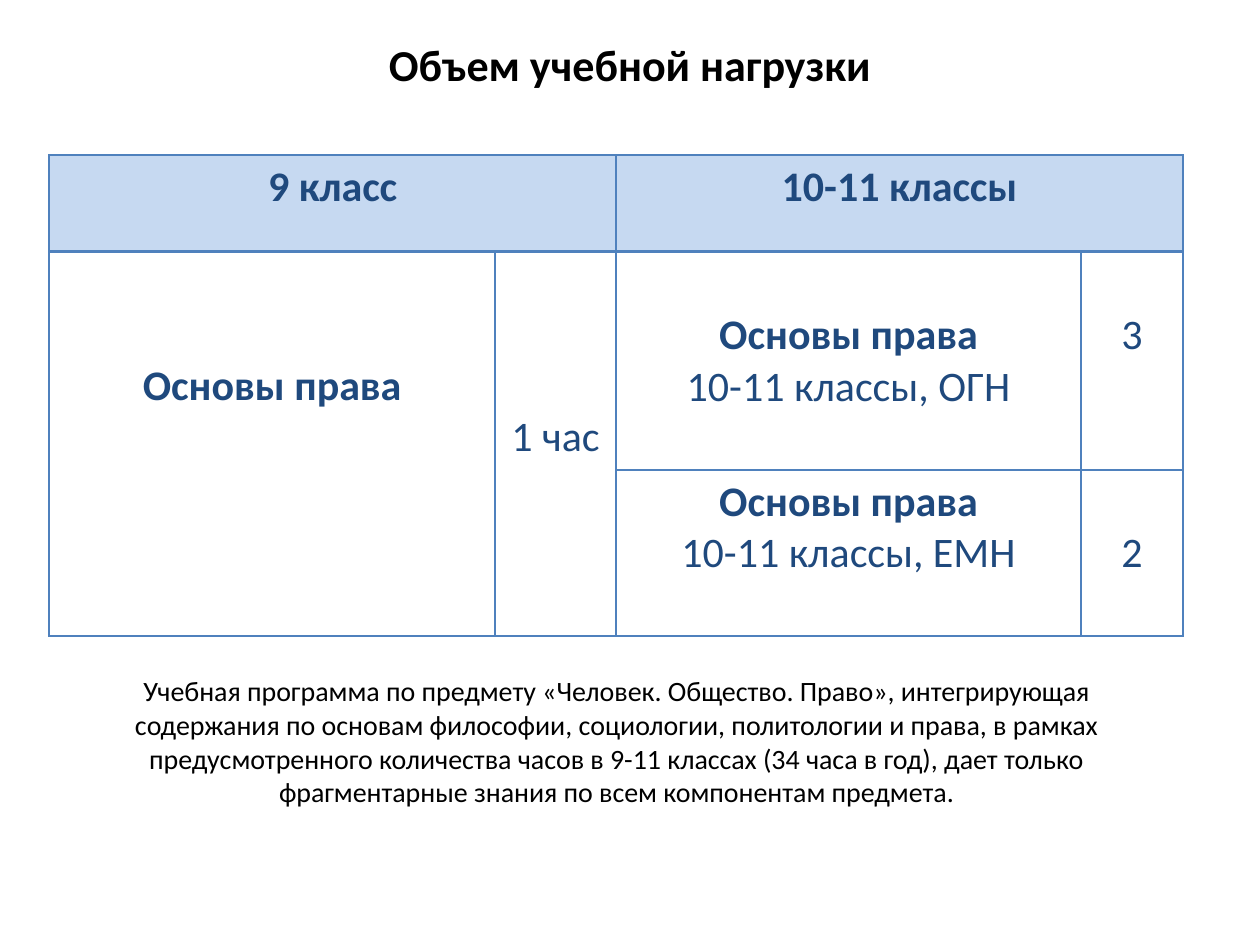
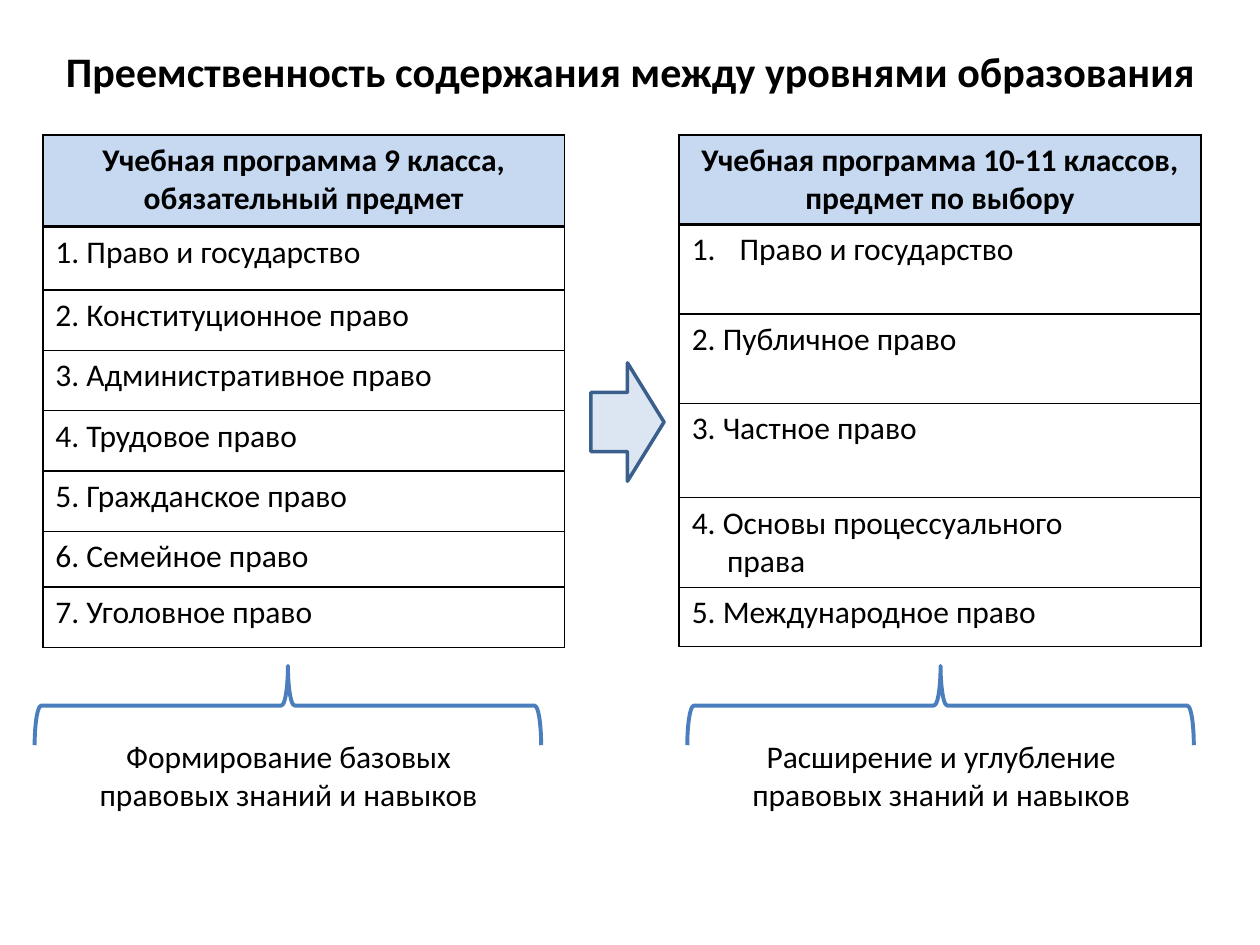
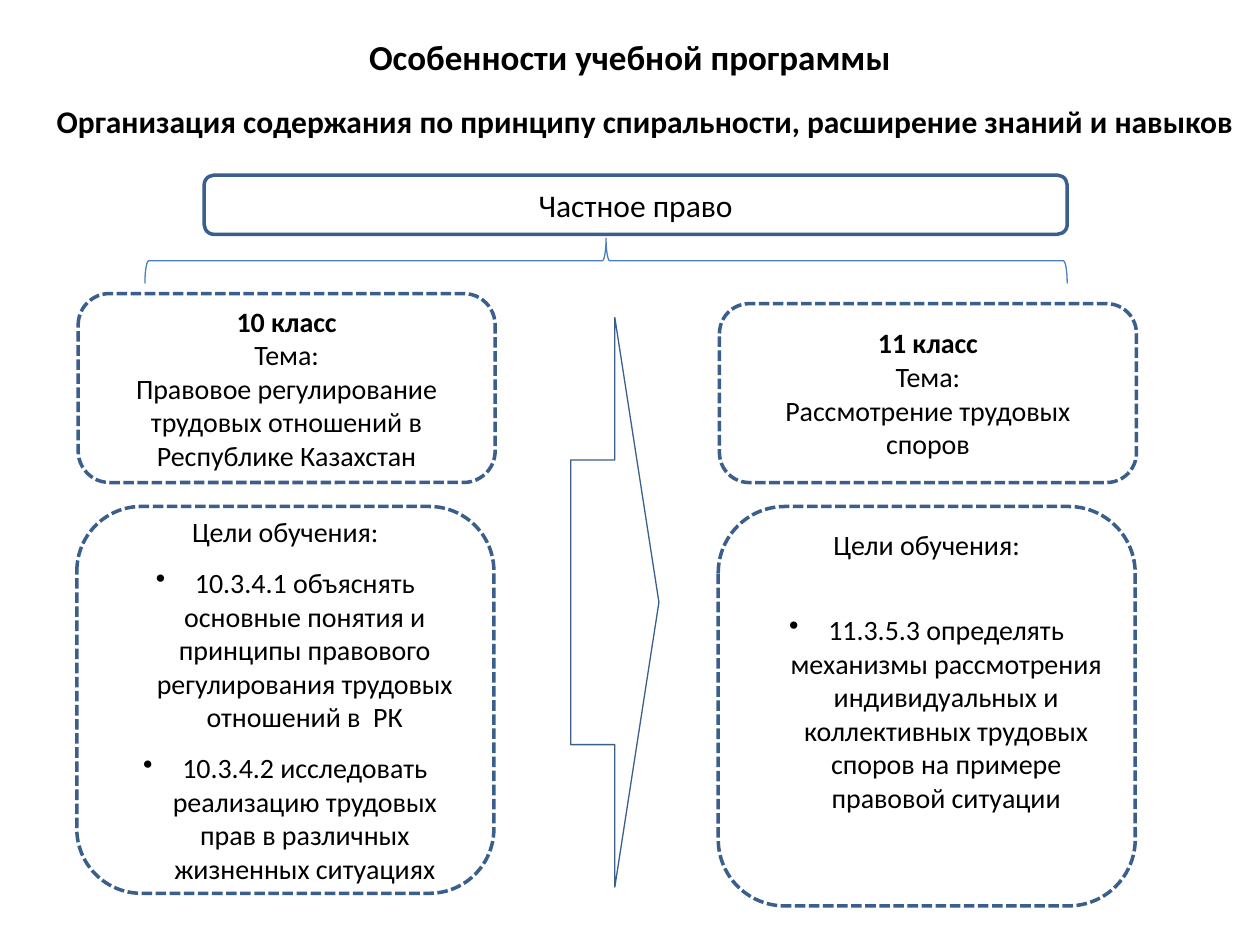
"""Build three slides on teaching the basics of law in grades 9 to 11."""
from dataclasses import dataclass
from typing import Any, Optional

from lxml import etree
from pptx import Presentation
from pptx.dml.color import RGBColor
from pptx.enum.dml import MSO_LINE
from pptx.enum.shapes import MSO_SHAPE
from pptx.enum.text import MSO_ANCHOR, MSO_AUTO_SIZE, PP_ALIGN
from pptx.oxml.ns import qn
from pptx.util import Inches, Pt

LEFT, CENTER = PP_ALIGN.LEFT, PP_ALIGN.CENTER
TOP, MIDDLE = MSO_ANCHOR.TOP, MSO_ANCHOR.MIDDLE
NO_FIT = MSO_AUTO_SIZE.NONE
DASH = MSO_LINE.SQUARE_DOT
ROUNDED = MSO_SHAPE.ROUNDED_RECTANGLE
ARROW = MSO_SHAPE.RIGHT_ARROW
LEFT_BRACE, RIGHT_BRACE = MSO_SHAPE.LEFT_BRACE, MSO_SHAPE.RIGHT_BRACE

FONT = "Calibri"
BLACK, WHITE, NAVY = "000000", "FFFFFF", "1F497D"
HEADER_BLUE, GRID_BLUE, PALE_BLUE = "C6D9F1", "4F81BD", "DCE6F2"
OUTLINE, BRACE_BLUE = "3A5F8C", "4B7EBC"


@dataclass(frozen=True)
class Box:
    """Place and size in inches."""
    left: float
    top: float
    width: float
    height: float

    def lengths(self) -> tuple:
        """Return the four lengths for python-pptx."""
        return tuple(Inches(v) for v in (self.left, self.top, self.width, self.height))


@dataclass(frozen=True)
class Para:
    """One paragraph and its format."""
    text: str
    bold: bool = False
    align: Any = CENTER
    before: Optional[float] = None
    indent: float = 0
    hanging: float = 0
    bullet: Optional[tuple[str, str, str]] = None


@dataclass(frozen=True)
class Entry:
    """A table cell with its span and top margin."""
    row: int
    col: int
    paras: list[Para]
    rows: int = 1
    cols: int = 1
    top: float = 0.05


@dataclass(frozen=True)
class Grid:
    """A table with its measures and cells."""
    left: float
    top: float
    widths: list[float]
    heights: list[float]
    entries: list[Entry]
    size: float
    color: str
    border: str


@dataclass(frozen=True)
class Outline:
    """A preset shape with its line, fill and rotation."""
    kind: Any
    box: Box
    line: str = OUTLINE
    weight: float = 2
    fill: Optional[str] = WHITE
    rotation: float = 0
    dash: Any = None


DOT = ("a:buChar", "char", "•")
NUMBER = ("a:buAutoNum", "type", "arabicPeriod")
NO_BULLET = ("a:buNone", "", "")


def rgb(color: str) -> RGBColor:
    """Turn a hex string into a colour."""
    return RGBColor.from_string(color)


def apply(target: Any, **values: Any) -> None:
    """Set attributes from format values."""
    for key, value in values.items():
        setattr(target, key, value)


def write(frame: Any, paras: list[Para], size: float, color: str = BLACK) -> None:
    """Fill a text frame with formatted paragraphs."""
    for index, para in enumerate(paras):
        line = frame.paragraphs[0] if index == 0 else frame.add_paragraph()
        line.alignment = para.align
        if para.before is not None:
            line.space_before = Pt(para.before)
        if para.indent or para.bullet:
            props = line._p.get_or_add_pPr()
            props.set("marL", str(Inches(para.indent)))
            props.set("indent", str(Inches(-para.hanging)))
        if para.bullet:
            tag, key, value = para.bullet
            mark = etree.SubElement(props, qn(tag))
            if key:
                mark.set(key, value)
        run = line.add_run()
        run.text = para.text
        apply(run.font, name=FONT, size=Pt(size), bold=para.bold)
        run.font.color.rgb = rgb(color)


def fill_placeholder(holder: Any, box: Box, para: Para, size: float, **frame_format: Any) -> None:
    """Move a placeholder and write its text."""
    apply(holder, **dict(zip(("left", "top", "width", "height"), box.lengths())))
    apply(holder.text_frame, auto_size=NO_FIT, word_wrap=True, **frame_format)
    write(holder.text_frame, [para], size)


def add_caption(slide: Any, box: Box, text: str, size: float) -> None:
    """Add a centred text box."""
    frame = slide.shapes.add_textbox(*box.lengths()).text_frame
    frame.word_wrap = True
    write(frame, [Para(text)], size)


def add_outline(slide: Any, item: Outline) -> Any:
    """Add a preset shape without a shadow."""
    shape = slide.shapes.add_shape(item.kind, *item.box.lengths())
    shape.shadow.inherit = False
    apply(shape, rotation=item.rotation)
    if item.fill:
        shape.fill.solid()
        shape.fill.fore_color.rgb = rgb(item.fill)
    else:
        shape.fill.background()
    shape.line.color.rgb = rgb(item.line)
    apply(shape.line, width=Pt(item.weight), dash_style=item.dash)
    return shape


def add_card(slide: Any, item: Outline, paras: list[Para], size: float, **frame_format: Any) -> None:
    """Add a shape that holds centred text."""
    frame = add_outline(slide, item).text_frame
    apply(frame, word_wrap=True, vertical_anchor=MIDDLE, **frame_format)
    write(frame, paras, size)


def add_borders(cell: Any, color: str, row: int) -> None:
    """Draw the cell borders, with a thick rule under the header."""
    weights = {"L": 1, "R": 1, "T": 2 if row == 1 else 1, "B": 2 if row == 0 else 1}
    props = cell._tc.get_or_add_tcPr()
    for side, weight in weights.items():
        edge = etree.SubElement(props, qn(f"a:ln{side}"), w=str(Pt(weight)))
        paint = etree.SubElement(edge, qn("a:solidFill"))
        etree.SubElement(paint, qn("a:srgbClr"), val=color)


def add_grid(slide: Any, grid: Grid) -> None:
    """Add a table with a tinted header row."""
    box = Box(grid.left, grid.top, sum(grid.widths), sum(grid.heights))
    table = slide.shapes.add_table(len(grid.heights), len(grid.widths), *box.lengths()).table
    apply(table, first_row=False, horz_banding=False)
    for column, width in zip(table.columns, grid.widths):
        column.width = Inches(width)
    for row, height in enumerate(grid.heights):
        table.rows[row].height = Inches(height)
        for cell in table.rows[row].cells:
            add_borders(cell, grid.border, row)
            cell.fill.solid()
            cell.fill.fore_color.rgb = rgb(WHITE if row else HEADER_BLUE)
    for entry in grid.entries:
        cell = table.cell(entry.row, entry.col)
        if entry.rows * entry.cols > 1:
            cell.merge(table.cell(entry.row + entry.rows - 1, entry.col + entry.cols - 1))
        apply(cell, margin_top=Inches(entry.top), vertical_anchor=TOP)
        write(cell.text_frame, entry.paras, grid.size, grid.color)


def build_workload(prs: Any) -> None:
    """Build the slide on teaching hours."""
    slide = prs.slides.add_slide(prs.slide_layouts[5])
    fill_placeholder(slide.shapes.title, Box(0.5, 0.3, 9, 0.85),
                     Para("Объем учебной нагрузки", True), 25.2,
                     vertical_anchor=TOP, margin_top=0)
    subject = Para("Основы права", True)
    entries = [
        Entry(0, 0, [Para("9 класс", True)], cols=2),
        Entry(0, 2, [Para("10-11 классы", True)], cols=2),
        Entry(1, 0, [subject], rows=2, top=0.86),
        Entry(1, 1, [Para("1 час")], rows=2, top=1.27),
        Entry(1, 2, [subject, Para("10-11 классы, ОГН")], top=0.46),
        Entry(1, 3, [Para("3")], top=0.46),
        Entry(2, 2, [subject, Para("10-11 классы, ЕМН")]),
        Entry(2, 3, [Para("2")], top=0.46),
    ]
    add_grid(slide, Grid(0.39, 1.23, [3.54, 0.96, 3.69, 0.81], [0.77, 1.73, 1.32],
                         entries, 24, NAVY, GRID_BLUE))
    add_caption(slide, Box(0.84, 5.3, 8.11, 1.45),
                "Учебная программа по предмету «Человек. Общество. Право», интегрирующая "
                "содержания по основам философии, социологии, политологии и права, в рамках "
                "предусмотренного количества часов в 9-11 классах (34 часа в год), дает только "
                "фрагментарные знания по всем компонентам предмета.", 16)


def build_continuity(prs: Any) -> None:
    """Build the slide that compares the two programmes."""
    slide = prs.slides.add_slide(prs.slide_layouts[5])
    fill_placeholder(slide.shapes.title, Box(0.28, 0.31, 9.45, 0.5),
                     Para("Преемственность содержания между уровнями образования", True), 24,
                     vertical_anchor=MIDDLE)
    basic_topics = ["Право и государство", "Конституционное право", "Административное право",
                    "Трудовое право", "Гражданское право", "Семейное право", "Уголовное право"]
    basic = [[Para(f"{number}. {topic}", align=LEFT)]
             for number, topic in enumerate(basic_topics, 1)]
    advanced = [
        [Para("Право и государство", align=LEFT, indent=0.38, hanging=0.38, bullet=NUMBER)],
        [Para("2. Публичное право", align=LEFT)],
        [Para("3. Частное право", align=LEFT)],
        [Para("4. Основы процессуального", align=LEFT), Para("права", align=LEFT, indent=0.28)],
        [Para("5. Международное право", align=LEFT)],
    ]
    programmes = [
        (0.34, ["Учебная программа 9 класса,", "обязательный предмет"], basic,
         [0.73, 0.5, 0.48, 0.48, 0.48, 0.48, 0.44, 0.48]),
        (5.39, ["Учебная программа 10-11 классов,", "предмет по выбору"], advanced,
         [0.71, 0.71, 0.71, 0.75, 0.71, 0.47]),
    ]
    for left, heading, topics, heights in programmes:
        cells = [[Para(line, True) for line in heading], *topics]
        entries = [Entry(row, 0, paras) for row, paras in enumerate(cells)]
        add_grid(slide, Grid(left, 1.07, [4.14], heights, entries, 18, BLACK, BLACK))
    add_outline(slide, Outline(ARROW, Box(4.69, 2.88, 0.58, 0.94), fill=PALE_BLUE))
    outcomes = [(0.45, "Формирование базовых правовых знаний и навыков"),
                (5.63, "Расширение и углубление правовых знаний и навыков")]
    for left, outcome in outcomes:
        add_caption(slide, Box(left, 5.8, 3.68, 1.01), outcome, 18)
        add_outline(slide, Outline(LEFT_BRACE, Box(left + 1.52, 3.59, 0.63, 4.02),
                                   BRACE_BLUE, 2.25, None, 90))


def build_features(prs: Any) -> None:
    """Build the slide on the spiral arrangement of content."""
    slide = prs.slides.add_slide(prs.slide_layouts[1])
    fill_placeholder(slide.shapes.title, Box(0.5, 0.3, 9, 0.3),
                     Para("Особенности учебной программы", True), 20, vertical_anchor=MIDDLE)
    principle = Para("Организация содержания по принципу спиральности, "
                     "расширение знаний и навыков", True, LEFT, bullet=NO_BULLET)
    fill_placeholder(slide.placeholders[1], Box(0.35, 0.76, 9.65, 0.63), principle, 18)
    add_card(slide, Outline(ROUNDED, Box(1.62, 1.39, 6.85, 0.47)), [Para("Частное право")], 18)

    themes = [
        (Box(0.62, 2.33, 3.31, 1.5), "10 класс",
         "Правовое регулирование трудовых отношений в Республике Казахстан"),
        (Box(5.71, 2.41, 3.31, 1.42), "11 класс", "Рассмотрение трудовых споров"),
    ]
    for box, grade, theme in themes:
        add_card(slide, Outline(ROUNDED, box, dash=DASH),
                 [Para(grade, True), Para("Тема:"), Para(theme)], 16,
                 margin_top=0, margin_bottom=0)

    goals = [
        (Box(0.61, 4.02, 3.31, 3.07), 9.8, 0,
         ["10.3.4.1 объяснять основные понятия и принципы правового регулирования "
          "трудовых отношений в  РК",
          "10.3.4.2 исследовать реализацию трудовых прав в различных жизненных ситуациях"]),
        (Box(5.7, 4.02, 3.31, 3.17), 29.3, 0.56,
         ["11.3.5.3 определять механизмы рассмотрения индивидуальных и коллективных "
          "трудовых споров на примере правовой ситуации"]),
    ]
    for box, gap, bottom, aims in goals:
        paras = [Para("Цели обучения:")]
        paras += [Para(aim, before=gap, indent=0.31, hanging=0.31, bullet=DOT) for aim in aims]
        add_card(slide, Outline(ROUNDED, box, dash=DASH), paras, 16,
                 margin_top=0, margin_bottom=Inches(bottom))

    add_outline(slide, Outline(RIGHT_BRACE, Box(4.63, -1.59, 0.36, 7.32),
                               BRACE_BLUE, 0.75, None, 270))
    add_outline(slide, Outline(ARROW, Box(4.53, 2.52, 0.7, 4.52), weight=0.75))


def main() -> None:
    """Build and save the presentation."""
    prs = Presentation()
    apply(prs, slide_width=Inches(10), slide_height=Inches(7.5))
    for build in (build_workload, build_continuity, build_features):
        build(prs)
    prs.save("out.pptx")


if __name__ == "__main__":
    main()
